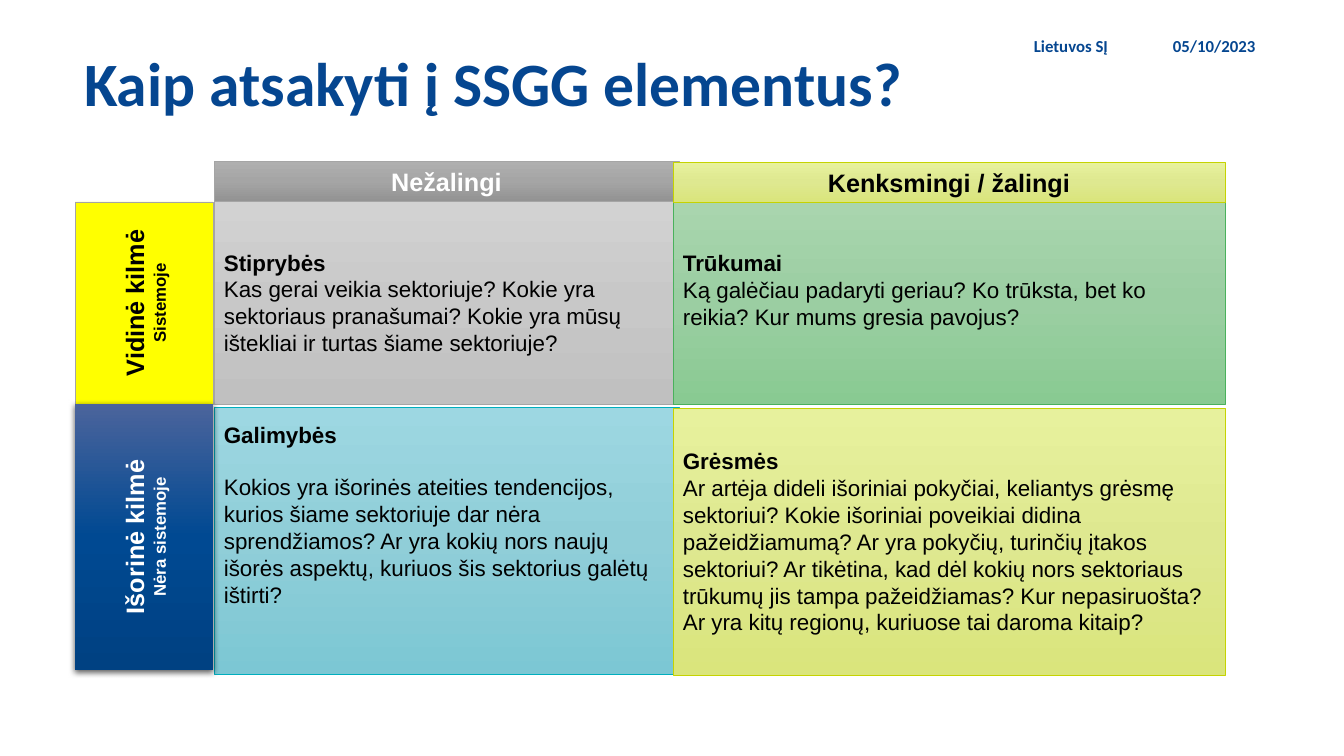
from pptx import Presentation
from pptx.dml.color import RGBColor
from pptx.enum.shapes import MSO_SHAPE
from pptx.enum.text import MSO_ANCHOR, MSO_AUTO_SIZE, PP_ALIGN
from pptx.oxml import parse_xml
from pptx.oxml.ns import nsdecls, qn
from pptx.util import Emu, Pt

# Fills list their gradient stops from top to bottom.
COLORS = {
    "blue": "054690", "black": "000000", "white": "FFFFFF",
    "yellow": "FFFF00",
    "silver": "D2D2D2 C8C8C8 C0C0C0",
    "grey": "AFAFAF A5A5A5 939393",
    "green": "A9D5AE 9BCEA2 89CA92",
    "teal": "9DD7E2 90CED8 7CC7D4",
    "lime": "E7F19D DEE890 DAE57C",
    "navy": "4B649C 004992 004182",
    "grey edge": "A5A5A5", "green edge": "4AB15C",
    "teal edge": "00AEBE", "lime edge": "C5D301",
}


def px(n):
    return Emu(round(n * 12192000 / 1344))


def rgb(name):
    return RGBColor.from_string(COLORS[name])


class Deck:
    def __init__(self):
        self.prs = Presentation()
        self.prs.slide_width, self.prs.slide_height = px(1344), px(756)
        self.slide = self.prs.slides.add_slide(self.prs.slide_layouts[5])

    def letter(self, shape, lines, sizes, color, align, font="Arial", bold=(True, True)):
        """Set the lines of a shape and format each one."""
        frame = shape.text_frame
        frame.text = "\n".join(lines)
        frame.word_wrap = True
        frame.auto_size = MSO_AUTO_SIZE.NONE
        frame.vertical_anchor = MSO_ANCHOR.MIDDLE
        for para, size, heavy in zip(frame.paragraphs, sizes, bold):
            para.alignment = align
            for run in para.runs:
                run.font.name, run.font.size = font, Pt(size)
                run.font.bold = heavy
                run.font.color.rgb = rgb(color)
        return frame

    def title(self, box, text):
        shape = self.slide.shapes.title
        shape.left, shape.top, shape.width, shape.height = map(px, box)
        frame = self.letter(shape, [text], [44], "blue", PP_ALIGN.LEFT, "Calibri")
        frame.paragraphs[0].line_spacing = 0.9

    def label(self, box, text, align):
        shape = self.slide.shapes.add_textbox(*map(px, box))
        self.letter(shape, [text], [12], "blue", align, "Calibri")

    def rect(self, box, fill, edge):
        shape = self.slide.shapes.add_shape(MSO_SHAPE.RECTANGLE, *map(px, box))
        shape.shadow.inherit = False
        stops = COLORS[fill].split()
        if len(stops) == 1:
            shape.fill.solid()
            shape.fill.fore_color.rgb = rgb(fill)
        else:
            self.shade(shape, stops)
        if edge:
            shape.line.color.rgb = rgb(edge)
            shape.line.width = Pt(0.5)
        else:
            shape.line.fill.background()
        return shape

    def shade(self, shape, stops):
        """Fill the shape with evenly spaced stops, top to bottom."""
        shape.fill.background()
        marks = "".join(
            f'<a:gs pos="{i * 50000}"><a:srgbClr val="{stop}"/></a:gs>'
            for i, stop in enumerate(stops))
        grad = parse_xml(
            f'<a:gradFill {nsdecls("a")} rotWithShape="1"><a:gsLst>{marks}</a:gsLst>'
            '<a:lin ang="5400000" scaled="0"/></a:gradFill>')
        props = shape._element.spPr
        props.replace(props.find(qn("a:noFill")), grad)

    def head(self, box, text, fill, edge, color):
        shape = self.rect(box, fill, edge)
        self.letter(shape, [text], [18], color, PP_ALIGN.CENTER)

    def side(self, box, lines, fill, edge, color):
        shape = self.rect(box, fill, edge)
        frame = self.letter(shape, lines, [18, 12], color, PP_ALIGN.CENTER)
        frame._txBody.bodyPr.set("vert", "vert270")
        return shape

    def cell(self, box, lines, fill, edge, gap=0, foot=5):
        """Draw a quadrant; gap parts its heading in points, foot is the bottom inset."""
        shape = self.rect(box, fill, edge)
        frame = self.letter(shape, lines, [16, 16], "black", PP_ALIGN.LEFT,
                            bold=(True, False))
        frame.paragraphs[1].space_before = Pt(gap)
        frame.margin_bottom = px(foot)

    def drop(self, shape):
        """Give the shape a soft shadow below."""
        shape._element.spPr.find(qn("a:effectLst")).append(parse_xml(
            f'<a:outerShdw {nsdecls("a")} blurRad="57150" dist="19050" dir="5400000" '
            'algn="ctr" rotWithShape="0"><a:srgbClr val="000000">'
            '<a:alpha val="63000"/></a:srgbClr></a:outerShdw>'))


def main():
    deck = Deck()
    deck.title((74, 34, 1159, 105), "Kaip atsakyti į SSGG elementus?")
    deck.label((1163, 34, 133, 24), "05/10/2023", PP_ALIGN.LEFT)
    deck.label((822, 34, 296, 24), "Lietuvos SĮ", PP_ALIGN.RIGHT)

    left, right = (214, 465), (673, 552)
    top, inner, outer = (161, 40), (201, 203), (407, 267)

    def place(col, row, shift=0):
        return col[0], row[0] + shift, col[1], row[1]

    deck.cell(place(left, inner), [
        "Stiprybės",
        "Kas gerai veikia sektoriuje? Kokie yra sektoriaus pranašumai? "
        "Kokie yra mūsų ištekliai ir turtas šiame sektoriuje?",
    ], "silver", "grey edge")
    deck.cell(place(right, inner), [
        "Trūkumai",
        "Ką galėčiau padaryti geriau? Ko trūksta, bet ko reikia? "
        "Kur mums gresia pavojus?",
    ], "green", "green edge", foot=31)
    deck.cell(place(left, outer), [
        "Galimybės",
        "Kokios yra išorinės ateities tendencijos, kurios šiame sektoriuje dar "
        "nėra sprendžiamos? Ar yra kokių nors naujų išorės aspektų, kuriuos šis "
        "sektorius galėtų ištirti?",
    ], "teal", "teal edge", gap=18.4, foot=57)
    deck.cell(place(right, outer, 1), [
        "Grėsmės",
        "Ar artėja dideli išoriniai pokyčiai, keliantys grėsmę sektoriui? Kokie "
        "išoriniai poveikiai didina pažeidžiamumą? Ar yra pokyčių, turinčių įtakos "
        "sektoriui? Ar tikėtina, kad dėl kokių nors sektoriaus trūkumų jis tampa "
        "pažeidžiamas? Kur nepasiruošta? Ar yra kitų regionų, kuriuose tai daroma "
        "kitaip?",
    ], "lime", "lime edge")

    deck.head(place(left, top), "Nežalingi", "grey", "grey edge", "white")
    deck.head(place(right, top, 1), "Kenksmingi / žalingi", "lime", "lime edge", "black")
    deck.side((75, 202, 138, 202), ["Vidinė kilmė", "Sistemoje"],
              "yellow", "grey edge", "black")
    deck.drop(deck.side((75, 404, 138, 266), ["Išorinė kilmė", "Nėra sistemoje"],
                        "navy", None, "white"))
    deck.prs.save("out.pptx")


if __name__ == "__main__":
    main()
